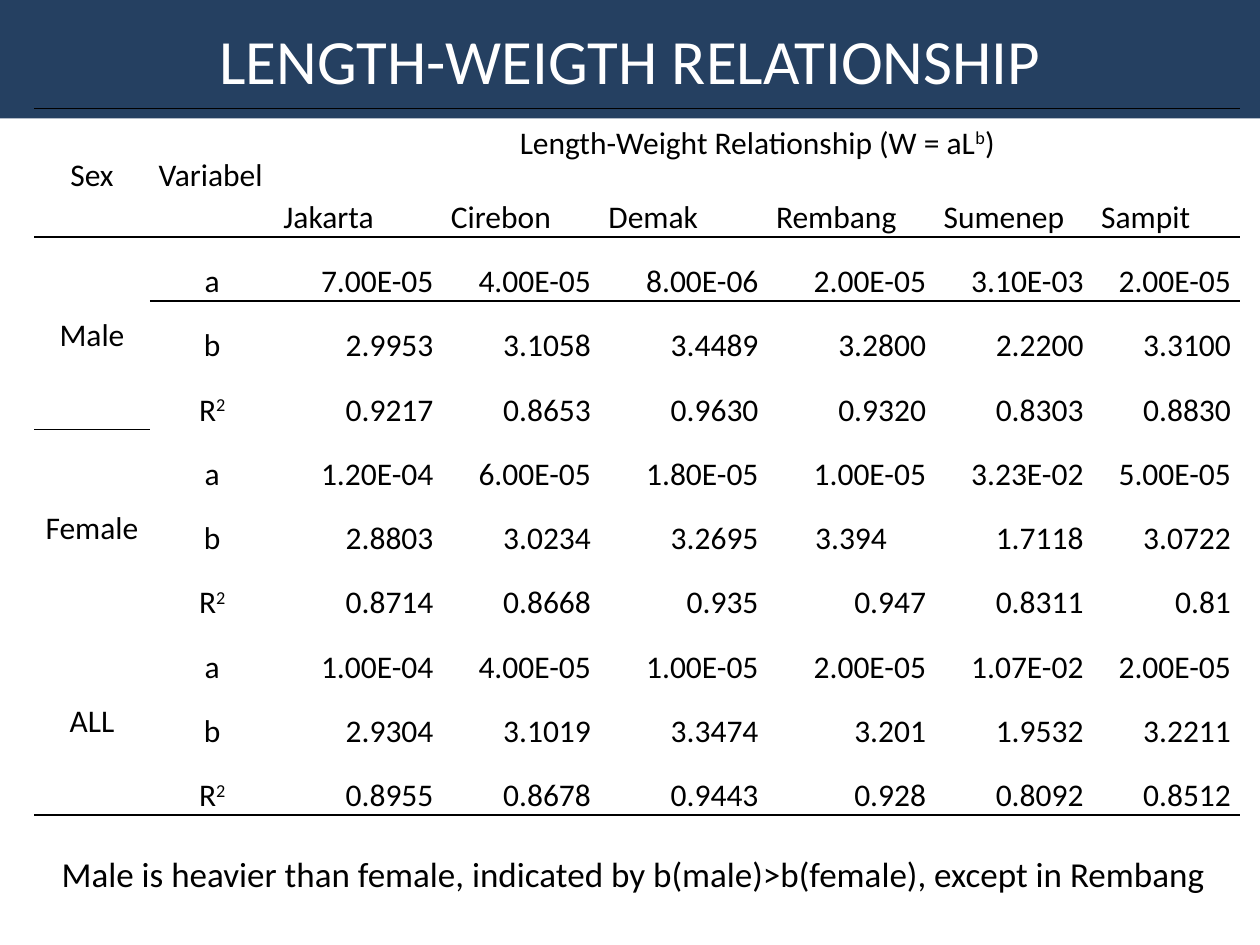
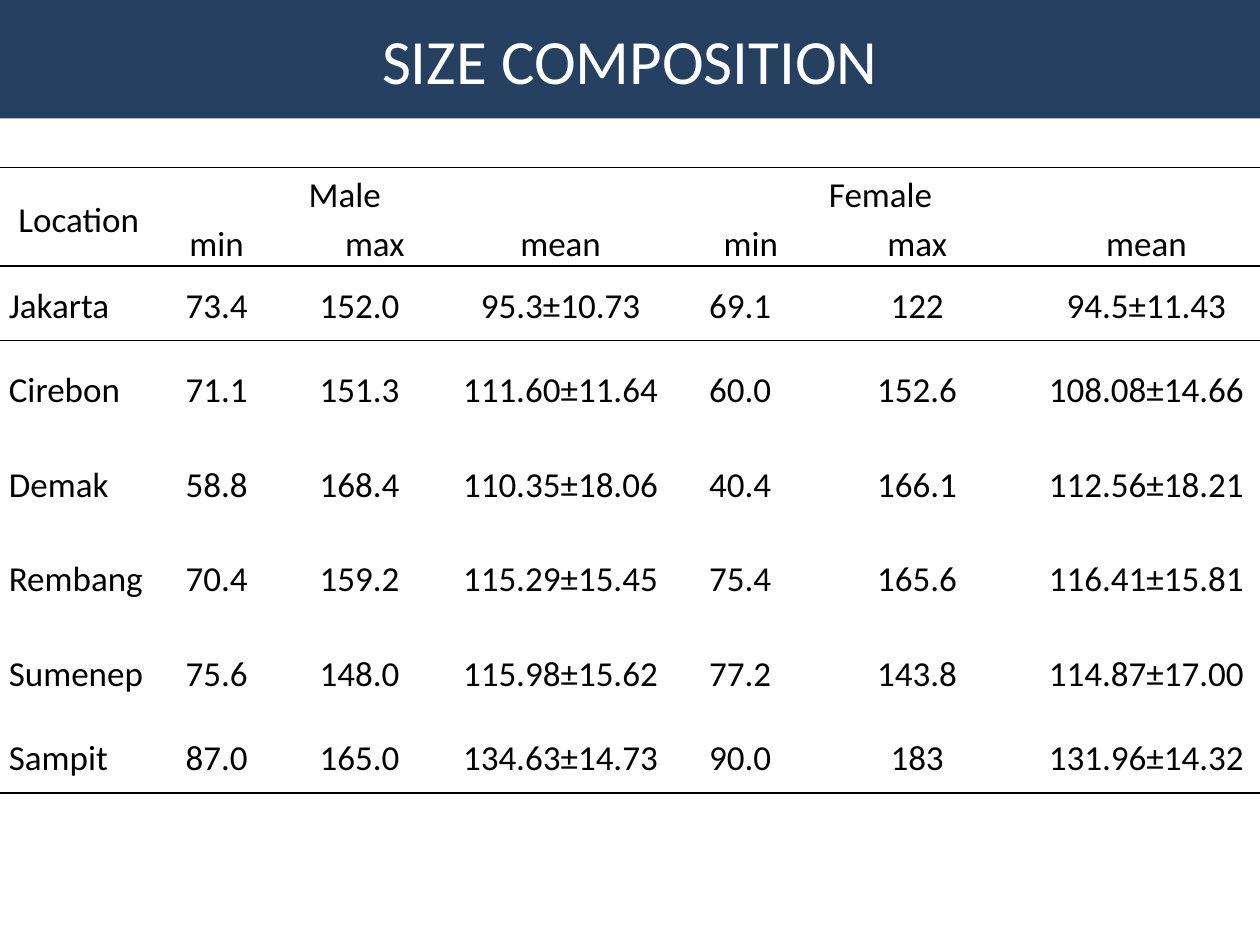
from lxml.etree import SubElement as Sub
from pptx import Presentation
from pptx.dml.color import RGBColor as RGB
from pptx.enum.text import MSO_ANCHOR as Anchor, PP_ALIGN as Align
from pptx.oxml.ns import qn
from pptx.util import Inches, Pt

# Shared look
FONT = "Calibri"
HUES = {"band": "254061", "title": "FFFFFF", "ink": "000000"}
ALIGNS = {"l": Align.LEFT, "c": Align.CENTER, "r": Align.RIGHT}
ANCHORS = {"m": Anchor.MIDDLE, "b": Anchor.BOTTOM}
PLAIN = "{2D5ABB26-0587-4C30-8999-92F81FD0307C}"  # table style without grid

# Content: text between carets is raised
CITIES = ["Jakarta", "Cirebon", "Demak", "Rembang", "Sumenep", "Sampit"]
FITS = {
    "Male": [
        ("a", "7.00E-05", "4.00E-05", "8.00E-06", "2.00E-05", "3.10E-03", "2.00E-05"),
        ("b", "2.9953", "3.1058", "3.4489", "3.2800", "2.2200", "3.3100"),
        ("R^2^", "0.9217", "0.8653", "0.9630", "0.9320", "0.8303", "0.8830"),
    ],
    "Female": [
        ("a", "1.20E-04", "6.00E-05", "1.80E-05", "1.00E-05", "3.23E-02", "5.00E-05"),
        ("b", "2.8803", "3.0234", "3.2695", "3.394", "1.7118", "3.0722"),
        ("R^2^", "0.8714", "0.8668", "0.935", "0.947", "0.8311", "0.81"),
    ],
    "ALL": [
        ("a", "1.00E-04", "4.00E-05", "1.00E-05", "2.00E-05", "1.07E-02", "2.00E-05"),
        ("b", "2.9304", "3.1019", "3.3474", "3.201", "1.9532", "3.2211"),
        ("R^2^", "0.8955", "0.8678", "0.9443", "0.928", "0.8092", "0.8512"),
    ],
}
SIZES = [
    ("73.4", "152.0", "95.3±10.73", "69.1", "122", "94.5±11.43"),
    ("71.1", "151.3", "111.60±11.64", "60.0", "152.6", "108.08±14.66"),
    ("58.8", "168.4", "110.35±18.06", "40.4", "166.1", "112.56±18.21"),
    ("70.4", "159.2", "115.29±15.45", "75.4", "165.6", "116.41±15.81"),
    ("75.6", "148.0", "115.98±15.62", "77.2", "143.8", "114.87±17.00"),
    ("87.0", "165.0", "134.63±14.73", "90.0", "183", "131.96±14.32"),
]
NOTE = "Male is heavier than female, indicated by b(male)>b(female), except in Rembang"

# Each table: rows, one align and anchor string per row, merges, indents
FIT = {
    "at": (0.27, 0.86), "size": 18,
    "cols": [0.92, 0.99, 1.33, 1.25, 1.33, 1.33, 1.25, 1.17],
    "tall": [0.51] * 11,
    "rows": [
        ["Sex", "Variabel", "Length-Weight Relationship (W = aL^b^)"] + [""] * 5,
        ["", ""] + CITIES,
        *([sex if i == 0 else "", *row]
          for sex, rows in FITS.items() for i, row in enumerate(rows)),
    ],
    "align": ["clcccccc", "clllllll"] + ["ccrrrrrr"] * 4 + ["ccrrrcrr"] + ["ccrrrrrr"] * 4,
    "anchor": ["m" * 8] + ["m" + "b" * 7] * 10,
    "merge": [(0, 0, 1, 0), (0, 1, 1, 1), (0, 2, 0, 7)]
    + [(r, 0, r + 2, 0) for r in (2, 5, 8)],
    "indent": {},
}
SIZE = {
    "at": (0, 1.33), "size": 20,
    "cols": [1.25, 0.94, 1.33, 1.86, 0.99, 1.82, 1.82],
    "tall": [0.37] * 2 + [0.59] + [0.75] * 4 + [0.59],
    "rows": [
        ["Location", "Male", "", "", "Female", "", ""],
        [""] + ["min", "max", "mean"] * 2,
        *([city, *row] for city, row in zip(CITIES, SIZES)),
    ],
    "align": ["cllllll", "ccccccc"] + ["lcccccc"] * 6,
    "anchor": ["m" * 7, "b" * 7] + ["m" * 7] * 6,
    "merge": [(0, 0, 1, 0), (0, 1, 0, 3), (0, 4, 0, 6)],
    "indent": {(0, 1): 1.13, (0, 4): 1.13, (1, 2): 0.24, (1, 4): 0.17},
}


def style(run, size, hue="ink"):
    font = run.font
    font.name, font.size = FONT, Pt(size)
    font.color.rgb = RGB.from_string(HUES[hue])


def add_page(deck, title):
    """Add a slide with its title on the dark band."""
    page = deck.slides.add_slide(deck.slide_layouts[5])
    band = page.shapes.title
    band.left, band.top = 0, 0
    band.width, band.height = deck.slide_width, Inches(0.94)
    band.fill.solid()
    band.fill.fore_color.rgb = RGB.from_string(HUES["band"])
    frame = band.text_frame
    frame.text = title
    frame.vertical_anchor = Anchor.MIDDLE
    frame.paragraphs[0].alignment = Align.CENTER
    style(frame.paragraphs[0].runs[0], 36, "title")
    return page


def rule(cell, side):
    """Draw a thin line along one side of a cell."""
    line = Sub(cell._tc.get_or_add_tcPr(), qn(f"a:ln{side}"), w=str(Pt(1)))
    fill = Sub(line, qn("a:solidFill"))
    Sub(fill, qn("a:srgbClr"), val=HUES["ink"])


def write(cell, text, size, align, indent):
    para = cell.text_frame.paragraphs[0]
    para.alignment, para.line_spacing = ALIGNS[align], 1.15
    if indent:
        para._p.get_or_add_pPr().set("marL", str(Inches(indent)))
    for i, part in enumerate(text.split("^")):
        if part:
            run = para.add_run()
            run.text = part
            style(run, size)
            if i % 2:
                run._r.get_or_add_rPr().set("baseline", "30000")


def add_grid(page, data):
    rows, cols, tall = data["rows"], data["cols"], data["tall"]
    left, top = data["at"]
    grid = page.shapes.add_table(
        len(rows), len(cols), Inches(left), Inches(top),
        Inches(sum(cols)), Inches(sum(tall))).table
    grid.first_row = grid.horz_banding = False
    grid._tbl.tblPr.find(qn("a:tableStyleId")).text = PLAIN
    for col, wide in zip(grid.columns, cols):
        col.width = Inches(wide)
    for row, high in zip(grid.rows, tall):
        row.height = Inches(high)
    for r, c, r2, c2 in data["merge"]:
        grid.cell(r, c).merge(grid.cell(r2, c2))

    for r, row in enumerate(rows):
        for c, text in enumerate(row):
            cell = grid.cell(r, c)
            cell.margin_left = cell.margin_right = Inches(0.07)
            cell.margin_top = cell.margin_bottom = 0
            cell.vertical_anchor = ANCHORS[data["anchor"][r][c]]
            # Lines above the head, below it and below the last row
            last = r + (cell.span_height if cell.is_merge_origin else 1) - 1
            if r in (0, 2):
                rule(cell, "T")
            if last in (1, len(rows) - 1):
                rule(cell, "B")
            cell.fill.background()
            write(cell, text, data["size"], data["align"][r][c],
                  data["indent"].get((r, c)))


def main():
    deck = Presentation()
    deck.slide_width, deck.slide_height = Inches(10), Inches(7.5)

    # Length and weight
    page = add_page(deck, "LENGTH-WEIGTH RELATIONSHIP")
    add_grid(page, FIT)
    frame = page.shapes.add_textbox(
        Inches(0.39), Inches(6.72), Inches(9.38), Inches(0.44)).text_frame
    frame.word_wrap = True
    frame.text = NOTE
    style(frame.paragraphs[0].runs[0], 20)

    # Sizes by place
    add_grid(add_page(deck, "SIZE COMPOSITION"), SIZE)
    deck.save("out.pptx")


if __name__ == "__main__":
    main()
